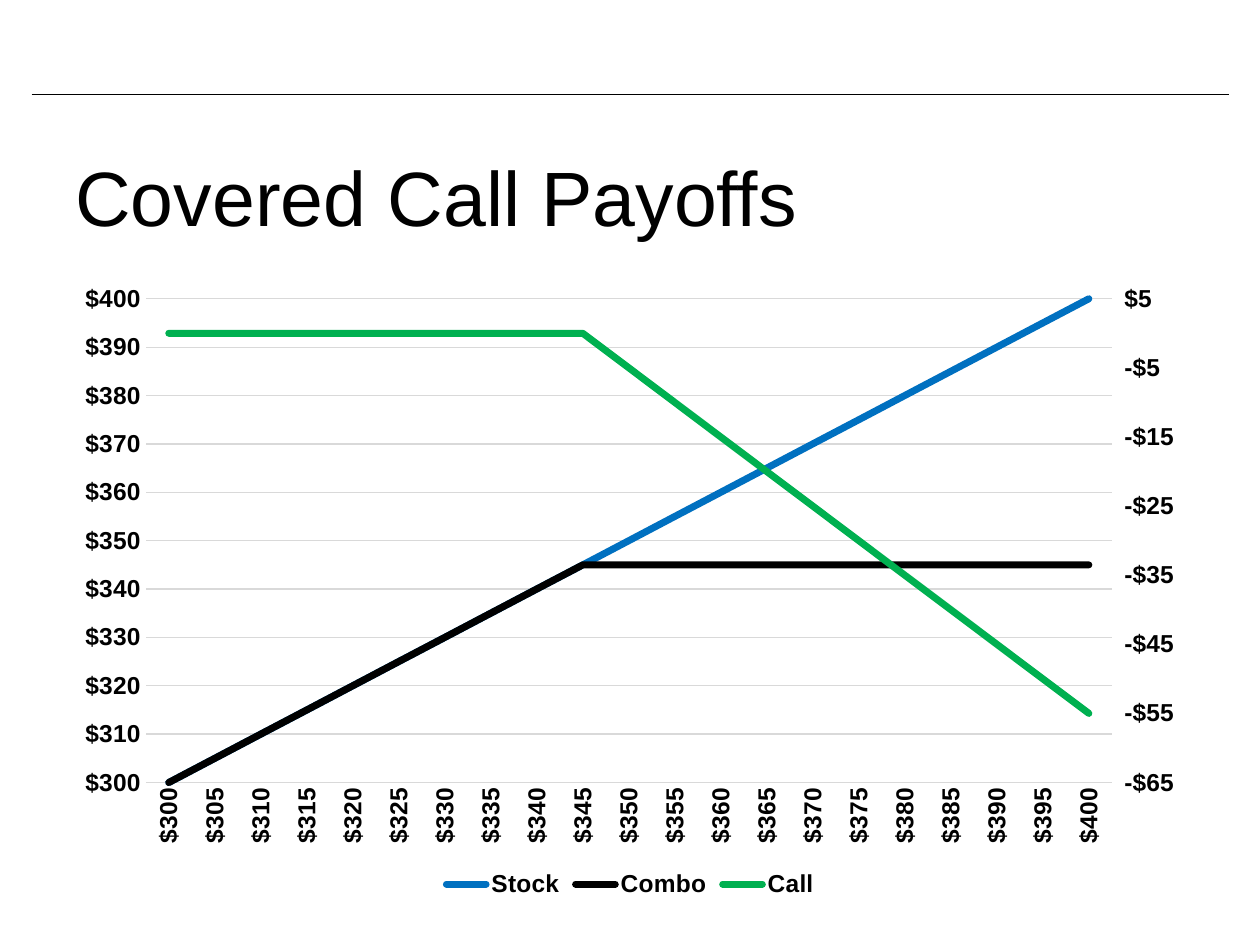
from copy import deepcopy

from lxml import etree
from pptx import Presentation
from pptx.chart.axis import ValueAxis
from pptx.chart.data import CategoryChartData
from pptx.dml.color import RGBColor
from pptx.enum import chart as ch, shapes, text
from pptx.oxml import parse_xml
from pptx.oxml.ns import nsdecls, qn
from pptx.util import Pt

FONT = "Arial"
BLACK, GREY = "000000", "D9D9D9"
DOLLARS = '"$"#,##0'
STRIKE = 345
PRICES = range(300, 401, 5)
SERIES = [
    ("Stock", "0070C0", list(PRICES)),
    ("Combo", BLACK, [min(p, STRIKE) for p in PRICES]),
    ("Call", "00B050", [min(0, STRIKE - p) for p in PRICES]),
]


def rgb(value):
    return RGBColor.from_string(value)


def style_font(font, size, bold=False):
    font.name, font.size, font.bold = FONT, Pt(size), bold
    font.color.rgb = rgb(BLACK)


def style_line(line, color, width):
    line.color.rgb = rgb(color)
    line.width = Pt(width)


def add_rule(s, x, y, w):
    c = s.shapes.add_connector(shapes.MSO_CONNECTOR.STRAIGHT,
                               Pt(x), Pt(y), Pt(x + w), Pt(y))
    style_line(c.line, BLACK, 1)
    etree.SubElement(c._element.spPr, qn("a:effectLst"))


def add_title(s, x, y, w, h, title):
    tf = s.shapes.add_textbox(Pt(x), Pt(y), Pt(w), Pt(h)).text_frame
    tf.word_wrap = True
    tf.vertical_anchor = text.MSO_ANCHOR.TOP
    tf.margin_top = Pt(7.5)
    tf.text = title
    style_font(tf.paragraphs[0].runs[0].font, 44)


def style_axis(axis):
    axis.major_tick_mark = axis.minor_tick_mark = ch.XL_TICK_MARK.NONE
    labels = axis.tick_labels
    style_font(labels.font, 14, True)
    labels.number_format = DOLLARS
    labels.number_format_is_linked = False


def set_scale(axis, low, high):
    axis.minimum_scale, axis.maximum_scale, axis.major_unit = low, high, 10


def move_last_to_right_axis(chart):
    """Put the last series in a second line plot with its own axes; return its value axis."""
    plot = chart.plots[0]._element
    right_plot = deepcopy(plot)
    for ser in plot.findall(qn("c:ser"))[-1:] + right_plot.findall(qn("c:ser"))[:-1]:
        ser.getparent().remove(ser)
    plot.addnext(right_plot)

    cat, val = chart.category_axis._element, chart.value_axis._element
    right_cat, right_val = deepcopy(cat), deepcopy(val)
    val.addnext(right_cat)
    right_cat.addnext(right_val)
    cat_id, val_id = "5001", "5002"
    for el, own, other in ((right_cat, cat_id, val_id), (right_val, val_id, cat_id)):
        el.find(qn("c:axId")).set("val", own)
        el.find(qn("c:crossAx")).set("val", other)
    for el, new_id in zip(right_plot.findall(qn("c:axId")), (cat_id, val_id)):
        el.set("val", new_id)
    right_cat.find(qn("c:delete")).set("val", "1")
    right_val.find(qn("c:axPos")).set("val", "r")
    right_val.find(qn("c:crosses")).set("val", "max")
    return ValueAxis(right_val)


def set_plot_box(chart, **fractions):
    """Fix the inner plot area as fractions of the chart frame."""
    area = chart._chartSpace.chart.plotArea
    for old in area.findall(qn("c:layout")):
        area.remove(old)
    places = "".join(f'<c:{k} val="{v}"/>' for k, v in fractions.items())
    area.insert(0, parse_xml(
        f'<c:layout {nsdecls("c")}><c:manualLayout><c:layoutTarget val="inner"/>'
        f'<c:xMode val="edge"/><c:yMode val="edge"/>{places}'
        '</c:manualLayout></c:layout>'))


def add_payoff_chart(s, x, y, w, h):
    data = CategoryChartData(number_format=DOLLARS)
    data.categories = PRICES
    data.categories.number_format = DOLLARS
    for name, _, values in SERIES:
        data.add_series(name, values)
    chart = s.shapes.add_chart(ch.XL_CHART_TYPE.LINE, Pt(x), Pt(y), Pt(w), Pt(h),
                               data).chart
    chart.has_title = False
    style_font(chart.font, 14, True)
    chart.has_legend = True
    chart.legend.position = ch.XL_LEGEND_POSITION.BOTTOM
    chart.legend.include_in_layout = False
    style_font(chart.legend.font, 14, True)

    chart.plots[0].vary_by_categories = False
    for ser, (_, color, _) in zip(chart.plots[0].series, SERIES):
        ser.smooth = False
        style_line(ser.format.line, color, 4)
        ser.format.line._get_or_add_ln().set("cap", "rnd")

    cat, val = chart.category_axis, chart.value_axis
    for axis in (cat, val):
        style_axis(axis)
    style_line(cat.format.line, GREY, 0.75)
    cat._element.find(qn("c:txPr")).find(qn("a:bodyPr")).set("rot", "-5400000")
    val.format.line.fill.background()
    set_scale(val, 300, 400)
    style_line(val.major_gridlines.format.line, GREY, 0.75)

    right = move_last_to_right_axis(chart)
    right.has_major_gridlines = False
    right.major_tick_mark = ch.XL_TICK_MARK.OUTSIDE
    set_scale(right, -65, 5)
    set_plot_box(chart, x=0.073, y=0.041, w=0.852, h=0.768)


def main():
    prs = Presentation()
    prs.slide_width, prs.slide_height = Pt(720), Pt(540)
    s = prs.slides.add_slide(prs.slide_layouts[6])
    add_rule(s, 18, 54, 684)
    add_title(s, 36, 78, 648, 78, "Covered Call Payoffs")
    add_payoff_chart(s, 36, 156, 648, 360)
    prs.save("out.pptx")


if __name__ == "__main__":
    main()
